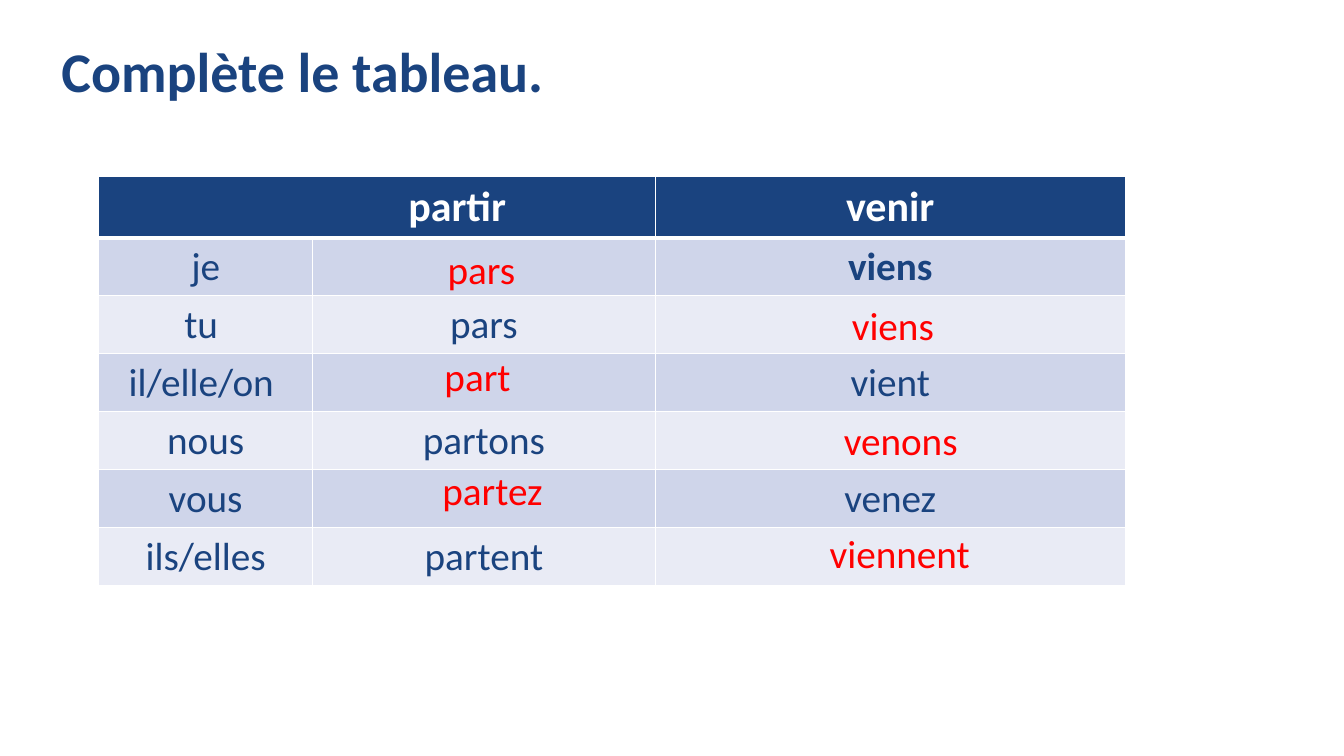
from dataclasses import dataclass

from lxml import etree
from pptx import Presentation
from pptx.dml.color import RGBColor
from pptx.enum.text import MSO_ANCHOR, MSO_AUTO_SIZE, PP_ALIGN
from pptx.oxml.ns import qn
from pptx.util import Inches, Pt

LEFT, CENTER = PP_ALIGN.LEFT, PP_ALIGN.CENTER
TOP, MIDDLE = MSO_ANCHOR.TOP, MSO_ANCHOR.MIDDLE
FIXED = MSO_AUTO_SIZE.NONE
TITLE_ONLY = 5
FONT = "Calibri"
COLORS = {
    "navy": "1A437F",
    "white": "FFFFFF",
    "red": "FF0000",
    "band_dark": "CFD5EA",
    "band_light": "E9EBF5",
}
GRID_STEP = 0.1
COLUMN_SPANS = (21.2, 34, 46.6)
HEADER_SPAN, BODY_SPAN = 6, 5.75
CONJUGATION = (
    ("je", "", "viens"),
    ("tu ", "pars", ""),
    ("il/elle/on ", "", "vient"),
    ("nous", "partons", ""),
    ("vous", "", "venez"),
    ("ils/elles", "partent", ""),
)


@dataclass(frozen=True)
class Answer:
    text: str
    column: float
    row: float
    span: float = 25.5


ANSWERS = (
    Answer("pars", 43.4, 23.8),
    Answer("part", 43.1, 34.5),
    Answer("partez", 42.9, 45.8, 32),
    Answer("viens", 83.5, 29.4),
    Answer("venons", 82.7, 40.8),
    Answer("viennent", 81.3, 52),
)


def grid(steps: float) -> int:
    return Inches(steps * GRID_STEP)


def write(frame, text: str, *, size: float = 28, color: str = "navy",
          bold: bool = False, align=LEFT, line_spacing: float = 1.0) -> None:
    para = frame.paragraphs[0]
    para.alignment = align
    para.line_spacing = line_spacing
    span = para.add_run()
    span.text = text
    span.font.name = FONT
    span.font.size = Pt(size)
    span.font.bold = bold
    span.font.color.rgb = RGBColor.from_string(COLORS[color])


def style_cell(cell, fill: str, bottom: float = 1, top: float = 1) -> None:
    properties = cell._tc.get_or_add_tcPr()
    for side, width in (("L", 1), ("R", 1), ("T", top), ("B", bottom)):
        line = etree.SubElement(properties, qn(f"a:ln{side}"), w=str(Pt(width)))
        paint = etree.SubElement(line, qn("a:solidFill"))
        etree.SubElement(paint, qn("a:srgbClr"), val=COLORS["white"])
    cell.fill.solid()
    cell.fill.fore_color.rgb = RGBColor.from_string(COLORS[fill])
    cell.margin_left = cell.margin_right = Inches(0.08)
    cell.margin_top = cell.margin_bottom = Inches(0.05)


def add_title(page) -> None:
    title = page.shapes.title
    title.left, title.top = grid(5.1), grid(4)
    title.width, title.height = grid(115), grid(6.8)
    frame = title.text_frame
    frame.auto_size = FIXED
    frame.vertical_anchor = MIDDLE
    write(frame, "Complète le tableau.", size=40, bold=True, line_spacing=0.9)


def add_conjugation_table(page) -> None:
    row_spans = (HEADER_SPAN,) + (BODY_SPAN,) * len(CONJUGATION)
    table = page.shapes.add_table(
        len(row_spans), len(COLUMN_SPANS), grid(9.8), grid(17.5),
        grid(sum(COLUMN_SPANS)), grid(sum(row_spans))).table
    for column, span in zip(table.columns, COLUMN_SPANS):
        column.width = grid(span)
    for row, span in zip(table.rows, row_spans):
        row.height = grid(span)

    for cell in table.rows[0].cells:
        style_cell(cell, "navy", bottom=3)
        cell.vertical_anchor = MIDDLE
    table.cell(0, 0).merge(table.cell(0, 1))
    table.cell(0, 0).margin_left = grid(16.7)
    for index, verb in ((0, "partir"), (2, "venir")):
        write(table.cell(0, index).text_frame, verb, size=30, color="white",
              bold=True, align=CENTER)

    for number, forms in enumerate(CONJUGATION, start=1):
        band = "band_dark" if number % 2 else "band_light"
        for index, form in enumerate(forms):
            cell = table.cell(number, index)
            style_cell(cell, band, top=3 if number == 1 else 1)
            cell.vertical_anchor = TOP
            if form:
                write(cell.text_frame, form, bold=form == "viens", align=CENTER)


def add_answer(page, answer: Answer) -> None:
    box = page.shapes.add_textbox(grid(answer.column), grid(answer.row),
                                  grid(answer.span), grid(5.7))
    box.text_frame.word_wrap = True
    write(box.text_frame, answer.text, color="red")


def main() -> None:
    deck = Presentation()
    deck.slide_width, deck.slide_height = Inches(13.33), Inches(7.5)
    page = deck.slides.add_slide(deck.slide_layouts[TITLE_ONLY])
    add_title(page)
    add_conjugation_table(page)
    for answer in ANSWERS:
        add_answer(page, answer)
    deck.save("out.pptx")


if __name__ == "__main__":
    main()
